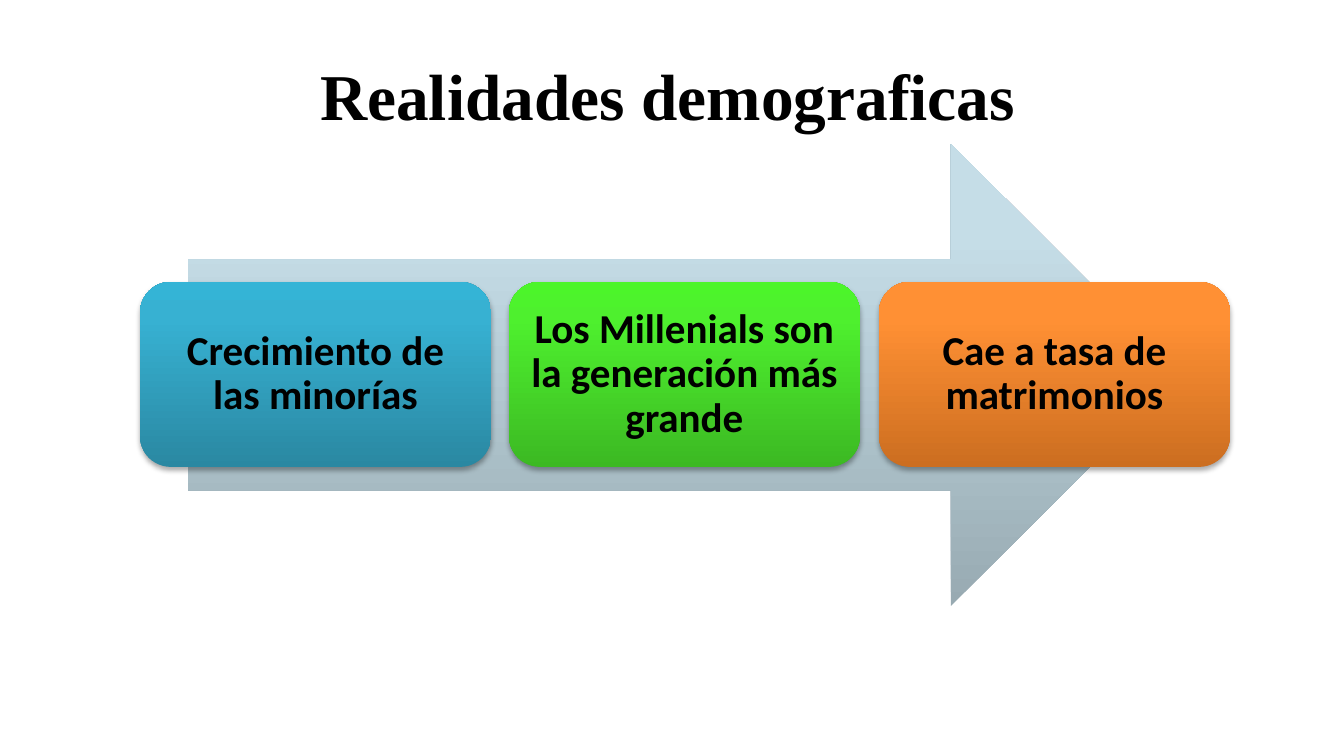
from pptx import Presentation
from pptx.dml.color import RGBColor
from pptx.enum.shapes import MSO_SHAPE as Shape
from pptx.enum.text import MSO_ANCHOR as Anchor, PP_ALIGN as Align
from pptx.oxml import parse_xml
from pptx.oxml.ns import nsdecls, qn
from pptx.util import Emu, Pt

SCALE = 9144000 / 1344  # EMU per px
STOPS = (0, 80, 100)  # gradient positions in percent, from the bottom up

ARROW_COLOURS = ("98AAB2", "C5DDE7", "C6DEE9")
CARDS = [
    ("Crecimiento de las minorías", ("2A88A2", "37B1D2", "34B4D6")),
    ("Los Millenials son la generación más grande", ("3CB923", "4EF02E", "4CF52A")),
    ("Cae a tasa de matrimonios", ("CC6E20", "FF9034", "FF9136")),
]


def px(length):
    return Emu(round(length * SCALE))


def colour(code):
    return RGBColor.from_string(code)


def write(shape, text, font, size, inset):
    """Put one bold, centred paragraph into a shape."""
    frame = shape.text_frame
    frame.text = text
    frame.word_wrap = True
    frame.vertical_anchor = Anchor.MIDDLE
    frame.margin_left = frame.margin_right = px(inset)
    frame.margin_top = frame.margin_bottom = px(inset)
    para = frame.paragraphs[0]
    para.alignment = Align.CENTER
    span = para.runs[0].font
    span.name, span.size, span.bold = font, Pt(size), True
    span.color.rgb = colour("000000")
    return para


def add_gradient_shape(page, kind, left, top, width, height, colours):
    shape = page.shapes.add_shape(kind, px(left), px(top), px(width), px(height))
    shape.shadow.inherit = False
    shape.line.fill.background()
    shape.fill.gradient()
    shape.fill.gradient_angle = 90
    stop_list = shape.fill._xPr.find(qn("a:gradFill")).find(qn("a:gsLst"))
    for stop in list(stop_list):
        stop_list.remove(stop)
    for position, code in zip(STOPS, colours):
        stop_list.append(parse_xml(
            f'<a:gs {nsdecls("a")} pos="{position * 1000}"><a:srgbClr val="{code}"/></a:gs>'))
    return shape


def add_shadow(shape):
    """Soft shadow straight below the shape."""
    effects = shape._element.spPr.find(qn("a:effectLst"))
    effects.append(parse_xml(
        f'<a:outerShdw {nsdecls("a")} blurRad="{Pt(3.1)}" dist="{Pt(1.8)}" dir="5400000" '
        'rotWithShape="0"><a:srgbClr val="000000"><a:alpha val="35000"/></a:srgbClr>'
        '</a:outerShdw>'))


def add_title(page, text):
    box = page.shapes.add_textbox(px(180), px(31), px(976), px(126))
    write(box, text, "Times New Roman", 35, 6)


def add_card(page, index, text, colours):
    left = 140 + index * 739 // 2
    card = add_gradient_shape(page, Shape.ROUNDED_RECTANGLE, left, 282, 351, 185, colours)
    add_shadow(card)
    para = write(card, text, "Calibri", 22, 12)
    para.line_spacing = 0.9


def main():
    deck = Presentation()
    deck.slide_width, deck.slide_height = px(1344), px(756)
    page = deck.slides.add_slide(deck.slide_layouts[6])

    add_title(page, "Realidades demograficas")

    # Arrow behind the cards
    add_gradient_shape(page, Shape.RIGHT_ARROW, 188, 144, 994, 462, ARROW_COLOURS)

    # Row of cards
    for index, (text, colours) in enumerate(CARDS):
        add_card(page, index, text, colours)

    deck.save("out.pptx")


if __name__ == "__main__":
    main()
